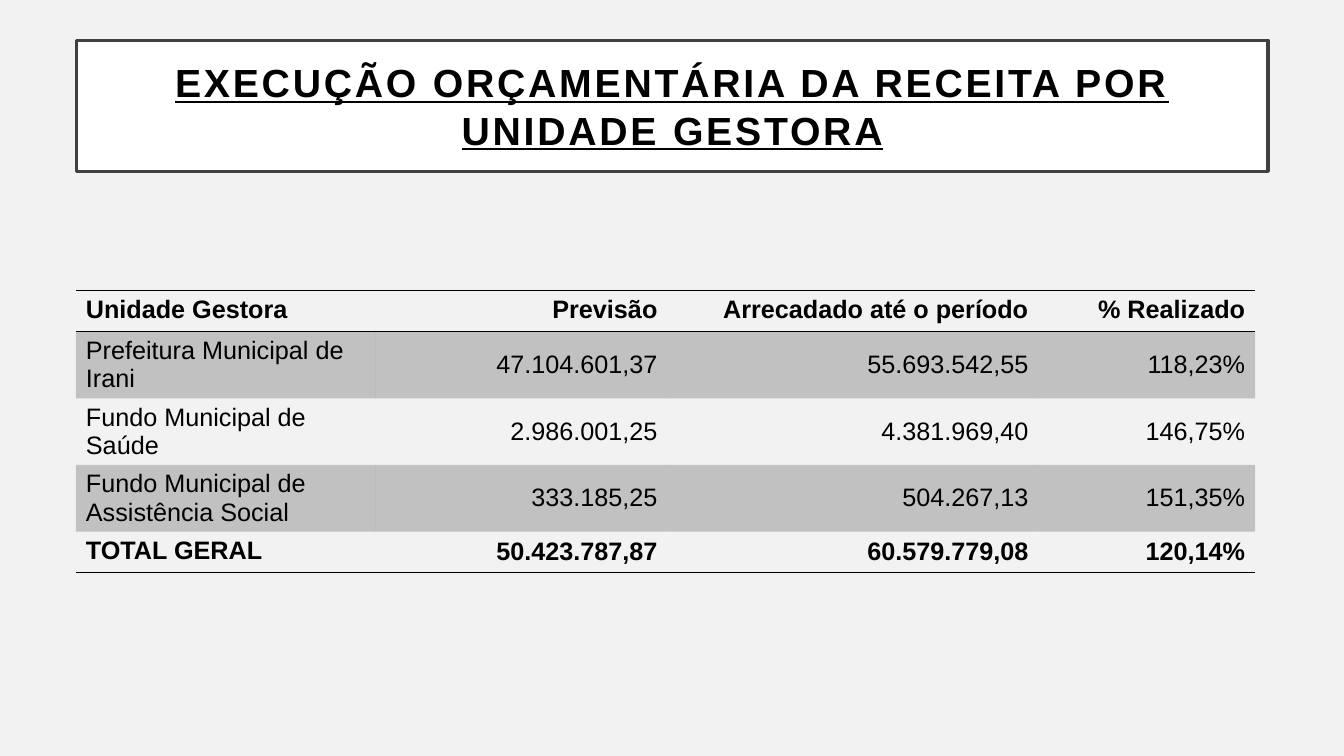
from dataclasses import dataclass

from lxml.etree import SubElement
from pptx import Presentation
from pptx.dml.color import RGBColor as Color
from pptx.enum.shapes import MSO_SHAPE as Preset
from pptx.enum.text import MSO_ANCHOR as Anchor, PP_ALIGN as Align
from pptx.oxml import parse_xml
from pptx.oxml.ns import nsdecls, qn
from pptx.slide import Slide
from pptx.table import _Cell as Cell
from pptx.text.text import TextFrame
from pptx.util import Length, Pt


@dataclass(frozen=True)
class Theme:
    """Colours, font and sizes of the slide."""
    background: str = "F2F2F2"
    panel: str = "FFFFFF"
    outline: str = "404040"
    ink: str = "000000"
    band_alpha: int = 20000
    font: str = "Arial"
    title_size: Length = Pt(28)
    body_size: Length = Pt(18)
    plain_table: str = "{2D5ABB26-0587-4C30-8999-92F81FD0307C}"


@dataclass(frozen=True)
class RevenueRow:
    """One table row with its height and styling."""
    values: tuple[str, str, str, str]
    height: Length = Pt(47.6)
    bold: bool = False
    banded: bool = False
    borders: tuple[str, ...] = ()
    anchor: Anchor = Anchor.MIDDLE


THEME = Theme()
TITLE = "EXECUÇÃO ORÇAMENTÁRIA DA RECEITA POR UNIDADE GESTORA"
COLUMN_WIDTHS = (Pt(213.8), Pt(208.8), Pt(265), Pt(154.8))
ROWS = (
    RevenueRow(("Unidade Gestora", "Previsão", "Arrecadado até o período", "% Realizado"),
               Pt(29.5), bold=True, borders=("lnT", "lnB"), anchor=Anchor.TOP),
    RevenueRow(("Prefeitura Municipal de Irani", "47.104.601,37", "55.693.542,55", "118,23%"),
               banded=True),
    RevenueRow(("Fundo Municipal de Saúde", "2.986.001,25", "4.381.969,40", "146,75%")),
    RevenueRow(("Fundo Municipal de Assistência Social", "333.185,25", "504.267,13", "151,35%"),
               banded=True),
    RevenueRow(("TOTAL GERAL", "50.423.787,87", "60.579.779,08", "120,14%"),
               Pt(29.5), bold=True, borders=("lnB",)),
)


def write_text(frame: TextFrame, text: str, size: Length, bold: bool, align: Align) -> None:
    """Fill a text frame with one formatted paragraph."""
    frame.text = text
    para = frame.paragraphs[0]
    para.alignment = align
    font = para.runs[0].font
    font.name, font.size, font.bold = THEME.font, size, bold
    font.color.rgb = Color.from_string(THEME.ink)


def add_title(page: Slide) -> None:
    """Draw the framed, underlined heading."""
    box = page.shapes.add_shape(Preset.RECTANGLE, Pt(54.7), Pt(28.8), Pt(851), Pt(93.6))
    box.shadow.inherit = False
    box.fill.solid()
    box.fill.fore_color.rgb = Color.from_string(THEME.panel)
    box.line.color.rgb = Color.from_string(THEME.outline)
    box.line.width = Pt(2.5)
    frame = box.text_frame
    frame.word_wrap = True
    frame.vertical_anchor = Anchor.MIDDLE
    frame.margin_left = frame.margin_right = Pt(14.4)
    frame.margin_top = frame.margin_bottom = Pt(14.4)
    write_text(frame, TITLE, THEME.title_size, True, Align.CENTER)
    span = frame.paragraphs[0].runs[0]
    span.font.underline = True
    span.font._element.set("spc", "200")


def style_cell(cell: Cell, row: RevenueRow) -> None:
    """Apply the band fill, rules and anchor of a row to a cell."""
    properties = cell._tc.get_or_add_tcPr()
    for tag in row.borders:
        properties.append(parse_xml(
            f'<a:{tag} {nsdecls("a")} w="{Pt(1)}"><a:solidFill>'
            f'<a:srgbClr val="{THEME.ink}"/></a:solidFill></a:{tag}>'))
    if row.banded:
        cell.fill.solid()
        cell.fill.fore_color.rgb = Color.from_string(THEME.ink)
        tint = properties.find(f'{qn("a:solidFill")}/{qn("a:srgbClr")}')
        SubElement(tint, qn("a:alpha"), val=str(THEME.band_alpha))
    else:
        cell.fill.background()


def add_revenue_table(page: Slide) -> None:
    """Draw the revenue table by managing unit."""
    table = page.shapes.add_table(
        len(ROWS), len(COLUMN_WIDTHS), Pt(54.2), Pt(207.4),
        sum(COLUMN_WIDTHS), sum(row.height for row in ROWS)).table
    table._tbl.tblPr.find(qn("a:tableStyleId")).text = THEME.plain_table
    table.first_row = table.horz_banding = False
    for column, width in zip(table.columns, COLUMN_WIDTHS):
        column.width = width
    for row_index, row in enumerate(ROWS):
        table.rows[row_index].height = row.height
        for column_index, value in enumerate(row.values):
            cell = table.cell(row_index, column_index)
            is_name = column_index == 0
            write_text(cell.text_frame, value, THEME.body_size, row.bold,
                       Align.LEFT if is_name else Align.RIGHT)
            cell.vertical_anchor = Anchor.TOP if is_name else row.anchor
            style_cell(cell, row)


def main() -> None:
    """Build the slide and save the deck."""
    deck = Presentation()
    deck.slide_width, deck.slide_height = Pt(960), Pt(540)
    page = deck.slides.add_slide(deck.slide_layouts[6])
    page.background.fill.solid()
    page.background.fill.fore_color.rgb = Color.from_string(THEME.background)
    add_title(page)
    add_revenue_table(page)
    deck.save("out.pptx")


if __name__ == "__main__":
    main()
